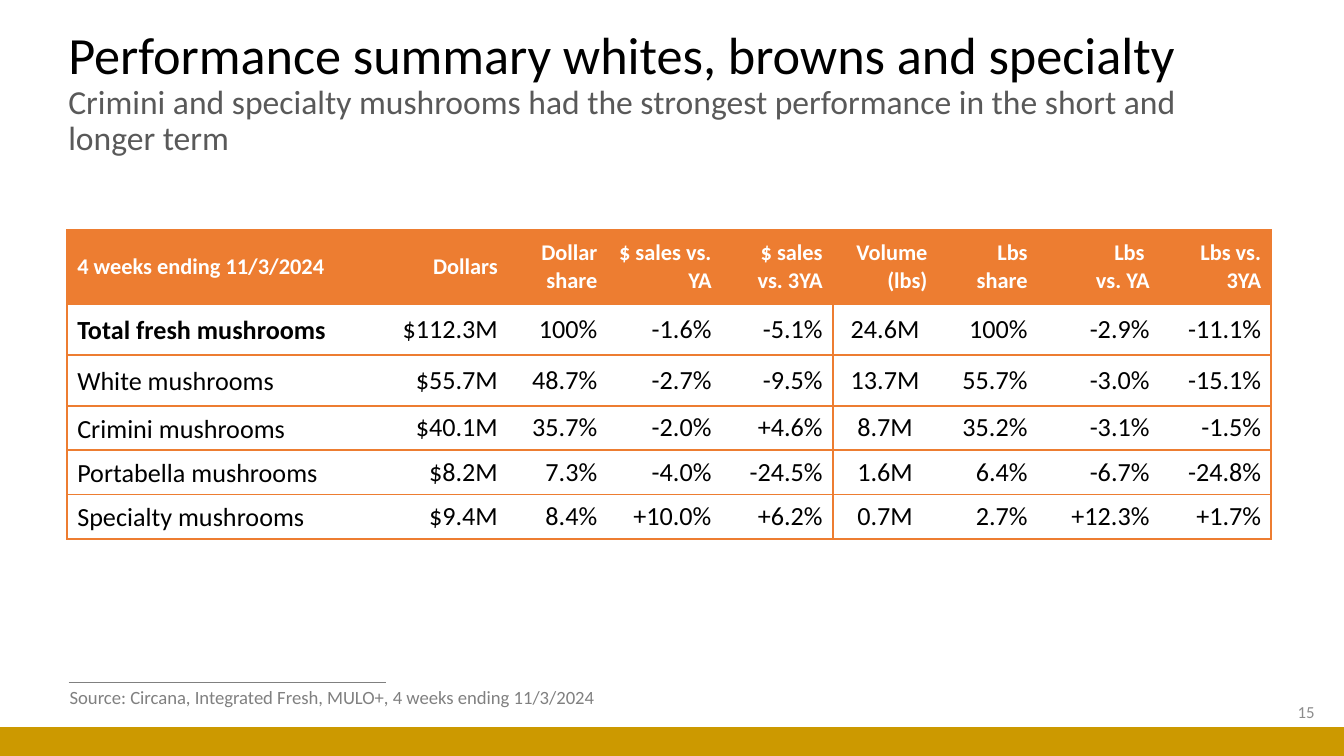
"""Build the mushroom performance summary slide on a grid of 0.1-inch columns and rows."""
import dataclasses

import lxml.etree
import pptx
import pptx.dml.color
import pptx.enum.shapes
import pptx.enum.text
import pptx.oxml.ns
import pptx.util

ALIGN = pptx.enum.text.PP_ALIGN
MIDDLE = pptx.enum.text.MSO_ANCHOR.MIDDLE
GRID_COLUMNS, GRID_ROWS = 100, 56.25
CELL_SIZE = pptx.util.Inches(10) / GRID_COLUMNS


@dataclasses.dataclass(frozen=True)
class Theme:
    """Colours, font and type sizes of the slide."""
    font: str = "Calibri"
    black: str = "000000"
    white: str = "FFFFFF"
    subtitle: str = "595959"
    source: str = "808080"
    number: str = "8C8C8C"
    accent: str = "ED7D31"
    band: str = "CC9900"
    title_size: int = 28
    subtitle_size: int = 18
    body_size: int = 14
    header_size: int = 12
    source_size: int = 10
    number_size: int = 9


THEME = Theme()
TITLE = "Performance summary whites, browns and specialty"
SUBTITLE = "Crimini and specialty mushrooms had the strongest performance in the short and longer term"
SOURCE = "Source: Circana, Integrated Fresh, MULO+, 4 weeks ending 11/3/2024"
COLUMN_WIDTHS = [23.7, 9.1, 7.4, 8.5, 8.27, 7.8, 7.45, 9.08, 8.3]
ROW_HEIGHTS = [5.5, 3.8, 3.8, 3.3, 3.3, 3.3]
LABEL_COLUMN, LAST_DOLLAR_COLUMN, VOLUME_COLUMN, LAST_COLUMN = 0, 4, 5, 8
TABLE_ROWS = [
    ["4 weeks ending 11/3/2024", "Dollars", "Dollar share", "$ sales vs. YA", "$ sales vs. 3YA",
     "Volume (lbs)", "Lbs\nshare", "Lbs \vvs. YA", "Lbs vs. 3YA"],
    ["Total fresh mushrooms", "$112.3M", "100%", "-1.6%", "-5.1%", "24.6M", "100%", "-2.9%", "-11.1%"],
    ["White mushrooms", "$55.7M", "48.7%", "-2.7%", "-9.5%", "13.7M", "55.7%", "-3.0%", "-15.1%"],
    ["Crimini mushrooms", "$40.1M", "35.7%", "-2.0%", "+4.6%", "8.7M", "35.2%", "-3.1%", "-1.5%"],
    ["Portabella mushrooms", "$8.2M", "7.3%", "-4.0%", "-24.5%", "1.6M", "6.4%", "-6.7%", "-24.8%"],
    ["Specialty mushrooms", "$9.4M", "8.4%", "+10.0%", "+6.2%", "0.7M", "2.7%", "+12.3%", "+1.7%"],
]


def grid(*lengths):
    """Turn grid units into slide lengths."""
    return [pptx.util.Emu(round(length * CELL_SIZE)) for length in lengths]


def rgb(value):
    """Return a colour object for a hexadecimal value."""
    return pptx.dml.color.RGBColor.from_string(value)


def format_run(run, size, color, bold=False):
    """Give a run its font, size, colour and weight."""
    run.font.name = THEME.font
    run.font.size = pptx.util.Pt(size)
    run.font.color.rgb = rgb(color)
    run.font.bold = bold


def add_text(slide, box, text, styles, align=ALIGN.LEFT, wrap=True, spacing=1.0):
    """Add a one-paragraph text box with a size and colour for each run."""
    frame = slide.shapes.add_textbox(*grid(*box)).text_frame
    frame.word_wrap = wrap
    frame.vertical_anchor = MIDDLE
    paragraph = frame.paragraphs[0]
    paragraph.text = text
    paragraph.alignment = align
    paragraph.line_spacing = spacing
    for run, (size, color) in zip(paragraph.runs, styles):
        format_run(run, size, color)


def add_band(slide):
    """Add the coloured band along the bottom edge."""
    rectangle = pptx.enum.shapes.MSO_SHAPE.RECTANGLE
    shape = slide.shapes.add_shape(rectangle, *grid(0, GRID_ROWS - 2.15, GRID_COLUMNS, 2.15))
    shape.shadow.inherit = False
    shape.fill.solid()
    shape.fill.fore_color.rgb = rgb(THEME.band)
    shape.line.fill.background()


def add_rule(slide, left, top, right):
    """Add the thin horizontal rule above the source."""
    straight = pptx.enum.shapes.MSO_CONNECTOR.STRAIGHT
    connector = slide.shapes.add_connector(straight, *grid(left, top, right, top))
    connector.line.color.rgb = rgb(THEME.source)
    connector.line.width = pptx.util.Pt(0.5)
    properties = connector._element.spPr
    lxml.etree.SubElement(properties, pptx.oxml.ns.qn("a:effectLst"))


def add_borders(cell, sides):
    """Draw accent borders on the given sides of a cell and clear the others."""
    properties = cell._tc.get_or_add_tcPr()
    for side in "LRTB":
        line = lxml.etree.SubElement(properties, pptx.oxml.ns.qn(f"a:ln{side}"), w=str(pptx.util.Pt(1)))
        if side in sides:
            fill = lxml.etree.SubElement(line, pptx.oxml.ns.qn("a:solidFill"))
            lxml.etree.SubElement(fill, pptx.oxml.ns.qn("a:srgbClr"), val=THEME.accent)
        else:
            lxml.etree.SubElement(line, pptx.oxml.ns.qn("a:noFill"))


def border_sides(column):
    """Return the bordered sides of a cell."""
    left = "L" if column in (LABEL_COLUMN, VOLUME_COLUMN) else ""
    right = "R" if column in (LAST_DOLLAR_COLUMN, LAST_COLUMN) else ""
    return left + right + "TB"


def fill_cell(cell, text, row, column):
    """Write and style one table cell."""
    header = row == 0
    is_label = column == LABEL_COLUMN
    add_borders(cell, border_sides(column))
    if header:
        cell.fill.solid()
        cell.fill.fore_color.rgb = rgb(THEME.accent)
    else:
        cell.fill.background()
    cell.margin_left, cell.margin_right = grid(0.75, 0.75)
    cell.margin_top = cell.margin_bottom = 0
    cell.vertical_anchor = MIDDLE
    cell.text_frame.text = text
    size, color = (THEME.header_size, THEME.white) if header else (THEME.body_size, THEME.black)
    for paragraph in cell.text_frame.paragraphs:
        paragraph.alignment = ALIGN.LEFT if is_label else ALIGN.RIGHT
        if column == VOLUME_COLUMN and not header:
            paragraph.alignment = ALIGN.CENTER
        if is_label and not header:
            paragraph.line_spacing = 1.07
            paragraph.space_after = pptx.util.Pt(8)
        for run in paragraph.runs:
            format_run(run, size, color, bold=header or (row == 1 and is_label))


def add_performance_table(slide, left, top):
    """Add the table of sales and volume by mushroom type."""
    box = grid(left, top, sum(COLUMN_WIDTHS), sum(ROW_HEIGHTS))
    table = slide.shapes.add_table(len(ROW_HEIGHTS), len(COLUMN_WIDTHS), *box).table
    table.horz_banding = False
    style = table._tbl.tblPr.find(pptx.oxml.ns.qn("a:tableStyleId"))
    style.text = "{2D5ABB26-0587-4C30-8999-92F81FD0307C}"
    for column, width in zip(table.columns, grid(*COLUMN_WIDTHS)):
        column.width = width
    for row, height in zip(table.rows, grid(*ROW_HEIGHTS)):
        row.height = height
    for row, texts in enumerate(TABLE_ROWS):
        for column, text in enumerate(texts):
            fill_cell(table.cell(row, column), text, row, column)


def main():
    """Build and save the slide."""
    presentation = pptx.Presentation()
    presentation.slide_width, presentation.slide_height = grid(GRID_COLUMNS, GRID_ROWS)
    slide = presentation.slides.add_slide(presentation.slide_layouts[6])
    add_rule(slide, 5.1, 50.8, 28.7)
    add_band(slide)
    add_text(slide, (4.1, 3, 88.5, 7.9), f"{TITLE}\v{SUBTITLE}",
             [(THEME.title_size, THEME.black), (THEME.subtitle_size, THEME.subtitle)], spacing=0.9)
    add_text(slide, (76.3, 51.5, 22.5, 3), "15", [(THEME.number_size, THEME.number)], ALIGN.RIGHT)
    add_text(slide, (4.2, 50.55, 41.8, 2.7), SOURCE, [(THEME.source_size, THEME.source)], wrap=False)
    add_performance_table(slide, 5, 17.1)
    presentation.save("out.pptx")


if __name__ == "__main__":
    main()
